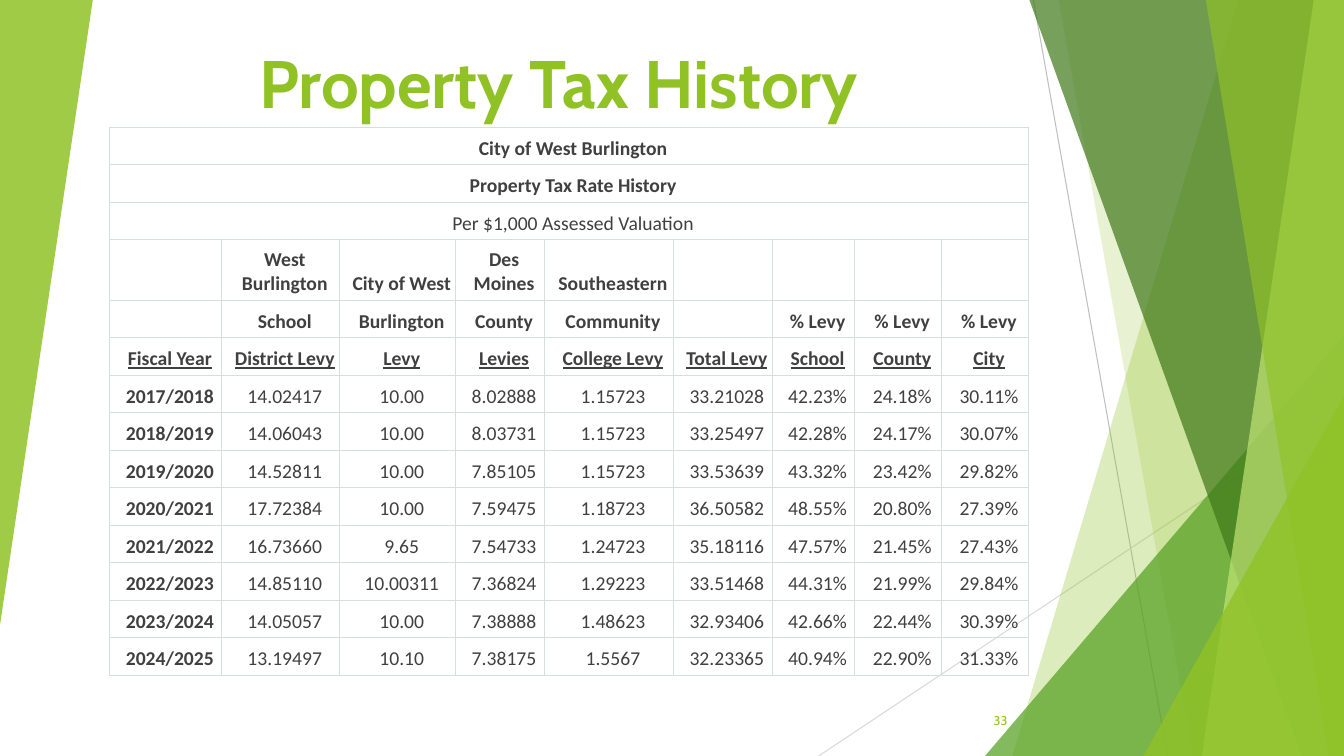
from pptx import Presentation, util as u
from pptx.dml import color
from pptx.enum import shapes, text
from pptx.oxml import parse_xml
from pptx.oxml.ns import nsdecls, qn
from lxml import etree

WIDTH, HEIGHT = 13.33, 7.5
GREEN, INK, BORDER = "90C226", "404040", "D8DEDC"


def rgb(value):
    return color.RGBColor.from_string(value)


def paint(shape, value, opacity):
    shape.shadow.inherit = False
    shape.fill.solid()
    shape.fill.fore_color.rgb = rgb(value)
    shape.line.fill.background()
    solid = shape.fill._xPr.find(qn("a:solidFill"))
    etree.SubElement(solid[0], qn("a:alpha")).set("val", str(opacity * 1000))


deck = Presentation()
deck.slide_width, deck.slide_height = u.Inches(WIDTH), u.Inches(HEIGHT)
page = deck.slides.add_slide(deck.slide_layouts[5])

for x1, y1, x2, y2, tint in [(10.25, 0, 11.58, HEIGHT, "BFBFBF"),
                             (WIDTH, 4.03, 8.12, HEIGHT, "D9D9D9")]:
    line = page.shapes.add_connector(shapes.MSO_CONNECTOR.STRAIGHT,
                                     *[u.Inches(v) for v in (x1, y1, x2, y2)])
    line.line.color.rgb = rgb(tint)
    line.line.width = u.Pt(0.75)
    etree.SubElement(line._element.spPr, qn("a:effectLst"))

facets = [
    ("band", 12.28, 10.04, GREEN, 30),
    ("band", 10.5, 11.83, GREEN, 20),
    ("triangle", 9.77, 3.33, "54A021", 72),
    ("band", 10.21, 12.91, "3F7819", 70),
    ("band", 13.03, 11.92, "C0E474", 70),
    ("band", 11.96, 13.18, GREEN, 65),
    ("triangle", 11.34, 3.93, GREEN, 80),
]
for kind, first, second, tint, opacity in facets:
    if kind == "band":
        corners = [(u.Inches(x), u.Inches(y)) for x, y in
                   [(first, 0), (WIDTH, 0), (WIDTH, HEIGHT), (second, HEIGHT)]]
        outline = page.shapes.build_freeform(*corners[0], scale=1.0)
        outline.add_line_segments(corners[1:], close=True)
        facet = outline.convert_to_shape()
    else:
        facet = page.shapes.add_shape(
            shapes.MSO_SHAPE.ISOSCELES_TRIANGLE, u.Inches(first), u.Inches(second),
            u.Inches(WIDTH - first), u.Inches(HEIGHT - second))
        facet.adjustments[0] = 1
    paint(facet, tint, opacity)

wedge = page.shapes.add_shape(shapes.MSO_SHAPE.ISOSCELES_TRIANGLE,
                              0, 0, u.Inches(0.92), u.Inches(6.2))
wedge.adjustments[0] = 1
wedge.rotation = 180
paint(wedge, GREEN, 85)

title = page.shapes.title
title.left, title.top, title.width, title.height = [
    u.Inches(v) for v in (2.47, 0.36, 8.39, 0.9)]
number = page.shapes.add_textbox(*[u.Inches(v) for v in (9.34, 6.95, 0.75, 0.4)])
for box, words, size, bold, align, anchor in [
        (title, "Property Tax History", 48, True,
         text.PP_ALIGN.LEFT, text.MSO_ANCHOR.BOTTOM),
        (number, "33", 9, False, text.PP_ALIGN.RIGHT, text.MSO_ANCHOR.MIDDLE)]:
    frame = box.text_frame
    frame.text = words
    frame.word_wrap = True
    frame.auto_size = text.MSO_AUTO_SIZE.NONE
    frame.vertical_anchor = anchor
    para = frame.paragraphs[0]
    para.alignment = align
    font = para.runs[0].font
    font.name, font.size, font.bold = "Cabin", u.Pt(size), bold
    font.color.rgb = rgb(GREEN)
number.text_frame.paragraphs[0].space_after = u.Pt(6)

rows = [
    ["City of West Burlington"],
    ["Property Tax Rate History"],
    ["Per $1,000 Assessed Valuation"],
    ["", "West Burlington", "City of West", "Des Moines", "Southeastern", "", "", "", ""],
    ["", "School", "Burlington", "County", "Community", "", "% Levy", "% Levy", "% Levy"],
    ["Fiscal Year", "District Levy", "Levy", "Levies", "College Levy", "Total Levy",
     "School", "County", "City"],
    ["2017/2018", "14.02417", "10.00", "8.02888", "1.15723", "33.21028", "42.23%", "24.18%", "30.11%"],
    ["2018/2019", "14.06043", "10.00", "8.03731", "1.15723", "33.25497", "42.28%", "24.17%", "30.07%"],
    ["2019/2020", "14.52811", "10.00", "7.85105", "1.15723", "33.53639", "43.32%", "23.42%", "29.82%"],
    ["2020/2021", "17.72384", "10.00", "7.59475", "1.18723", "36.50582", "48.55%", "20.80%", "27.39%"],
    ["2021/2022", "16.73660", "9.65", "7.54733", "1.24723", "35.18116", "47.57%", "21.45%", "27.43%"],
    ["2022/2023", "14.85110", "10.00311", "7.36824", "1.29223", "33.51468", "44.31%", "21.99%", "29.84%"],
    ["2023/2024", "14.05057", "10.00", "7.38888", "1.48623", "32.93406", "42.66%", "22.44%", "30.39%"],
    ["2024/2025", "13.19497", "10.10", "7.38175", "1.5567", "32.23365", "40.94%", "22.90%", "31.33%"],
]
widths = [1.11, 1.17, 1.15, 0.88, 1.28, 0.98, 0.82, 0.86, 0.86]
TABLE_HEIGHT, TALL_ROW = 5.44, 0.6
BANNERS, NAMES, UNDERLINED = 3, 3, 5

levies = page.shapes.add_table(len(rows), len(widths), u.Inches(1.09), u.Inches(1.26),
                               u.Inches(sum(widths)), u.Inches(TABLE_HEIGHT)).table
levies.first_row = levies.horz_banding = False
for column, width in zip(levies.columns, widths):
    column.width = u.Inches(width)
for r, row in enumerate(levies.rows):
    row.height = u.Inches(TALL_ROW if r == NAMES
                          else (TABLE_HEIGHT - TALL_ROW) / (len(rows) - 1))
    if r < BANNERS:
        levies.cell(r, 0).merge(levies.cell(r, len(widths) - 1))
    for c, cell in enumerate(row.cells):
        cell.margin_left, cell.margin_right = u.Inches(0.08), 0
        cell.margin_top = cell.margin_bottom = u.Inches(0.04)
        cell.vertical_anchor = text.MSO_ANCHOR.BOTTOM
        para = cell.text_frame.paragraphs[0]
        para.text = rows[r][c] if c < len(rows[r]) else ""
        para.alignment = text.PP_ALIGN.CENTER
        para._p.get_or_add_endParaRPr().set("sz", "1400")
        for span in para.runs:
            font = span.font
            font.name, font.size = "Calibri", u.Pt(14)
            font.color.rgb = rgb(INK)
            font.bold = r != BANNERS - 1 and (r <= UNDERLINED or c == 0)
            font.underline = r == UNDERLINED
        props = cell._tc.get_or_add_tcPr()
        for side in ("lnL", "lnR", "lnT", "lnB"):
            props.append(parse_xml(
                f'<a:{side} {nsdecls("a")} w="{u.Pt(0.75)}"><a:solidFill>'
                f'<a:srgbClr val="{BORDER}"/></a:solidFill></a:{side}>'))
        cell.fill.background()

deck.save("out.pptx")
